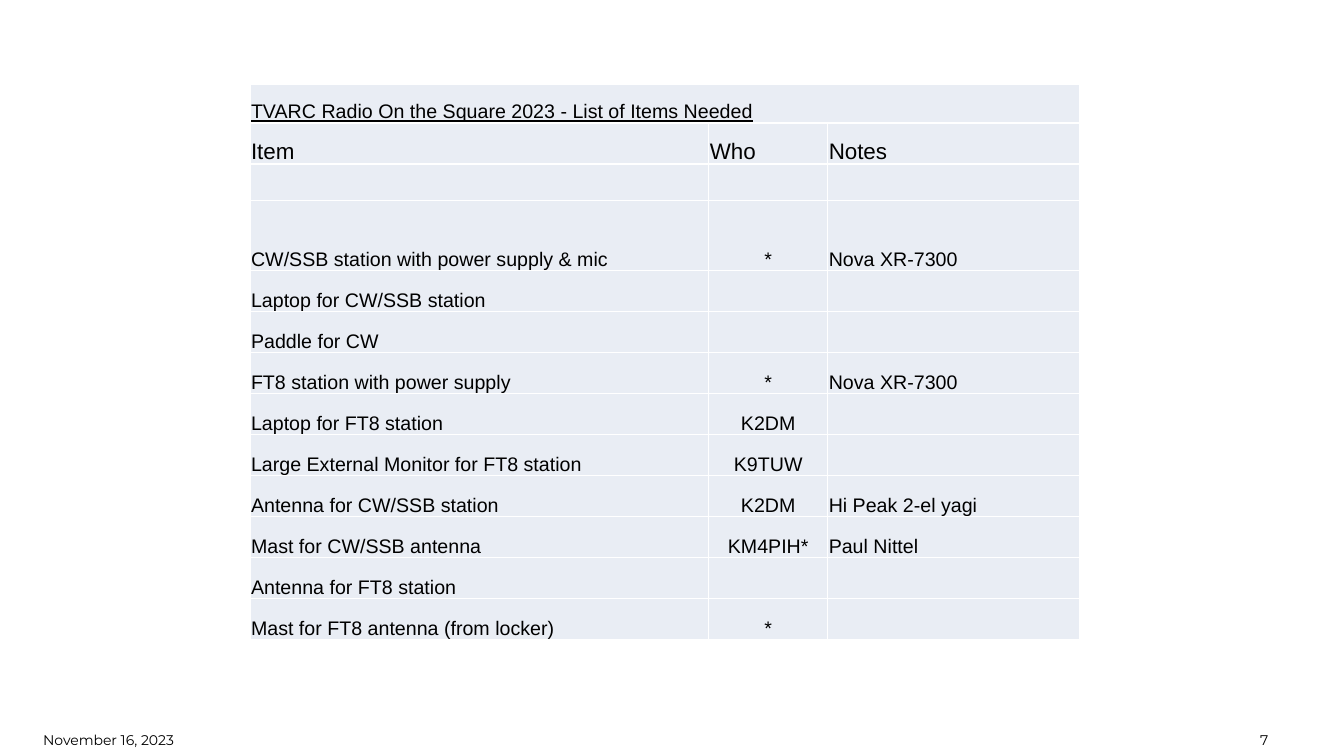
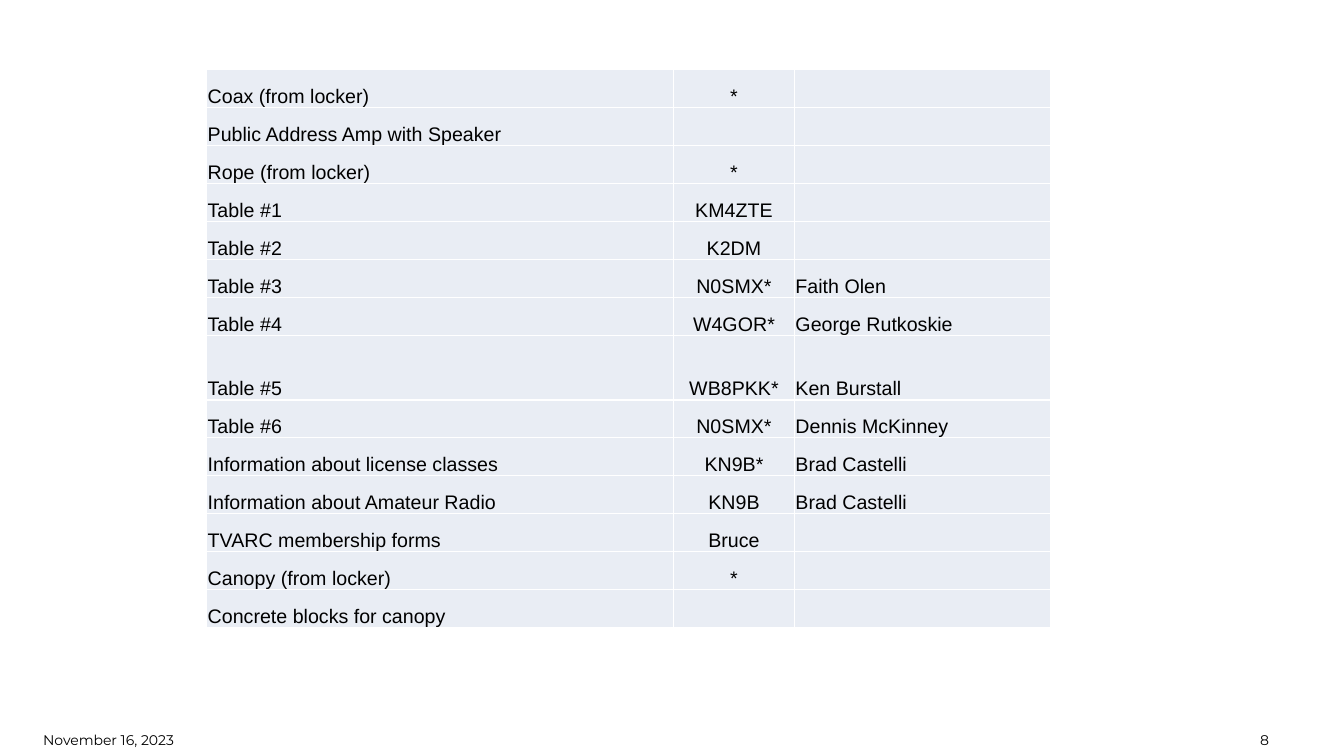
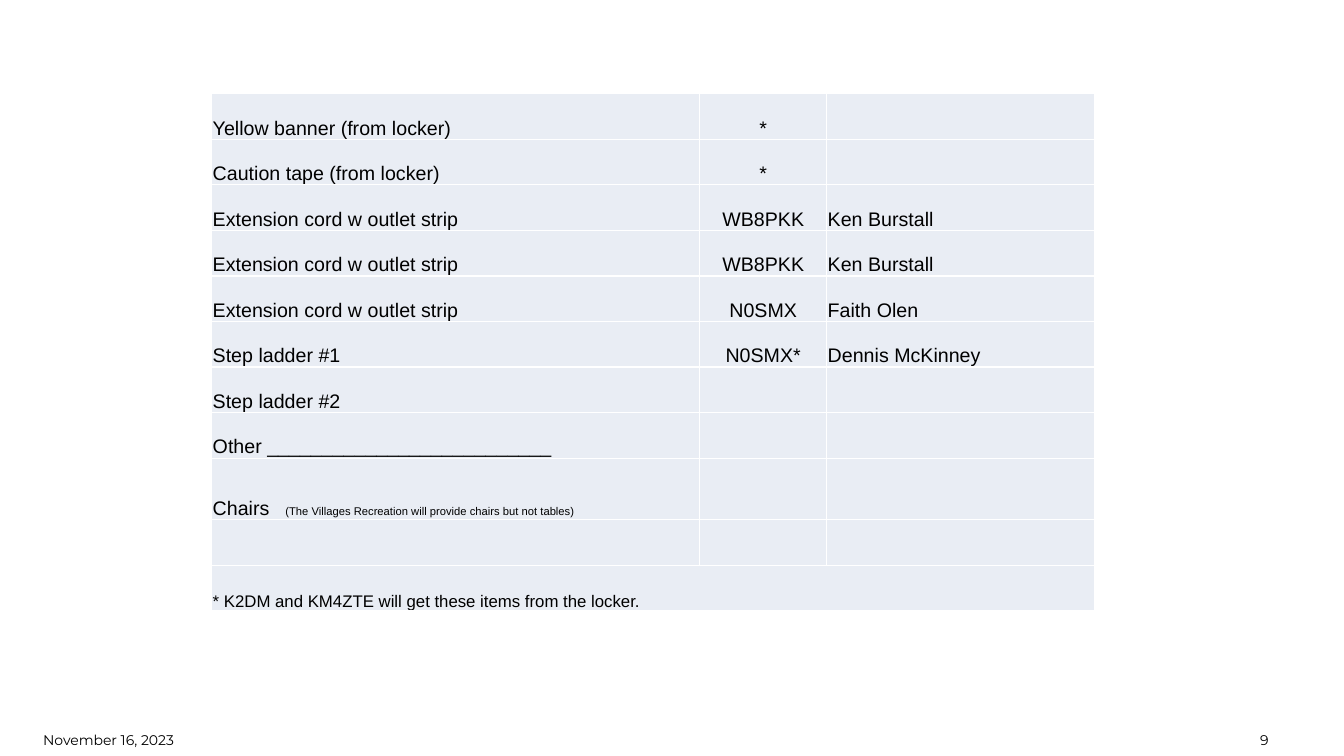
"""Builds three slides listing the items needed for a radio club event."""
import dataclasses

import lxml.etree
import pptx
import pptx.dml.color
import pptx.enum.text
import pptx.oxml.ns
import pptx.util

Inches = pptx.util.Inches
Pt = pptx.util.Pt
RGB = pptx.dml.color.RGBColor.from_string
PP_ALIGN = pptx.enum.text.PP_ALIGN
qn = pptx.oxml.ns.qn


@dataclasses.dataclass(frozen=True)
class Theme:
    ink: str = "000000"
    cell: str = "E9EDF4"
    border: str = "FFFFFF"
    table_font: str = "Arial"
    footer_font: str = "Montserrat"
    header: int = 16
    body: int = 14
    footnote: int = 12
    footer: int = 10
    remark: int = 8


theme = Theme()


def add_run(p, text, font=theme.table_font, size=theme.body, color=theme.ink, underline=None):
    r = p.add_run()
    r.text = text
    r.font.name = font
    r.font.size = Pt(size)
    r.font.color.rgb = RGB(color)
    r.font.underline = underline


def add_borders(cell):
    tcPr = cell._tc.get_or_add_tcPr()
    for side in ("lnL", "lnR", "lnT", "lnB"):
        ln = lxml.etree.SubElement(tcPr, qn(f"a:{side}"), w=str(Pt(1)))
        fill = lxml.etree.SubElement(ln, qn("a:solidFill"))
        lxml.etree.SubElement(fill, qn("a:srgbClr"), val=theme.border)


first_page = 7
date = "November 16, 2023"
tables = [
    {
        "at": (2.48, 0.84), "height": 5.51, "cols": (4.55, 1.18, 2.5),
        "special_heights": {0: 0.38, 2: 0.36, 3: 0.7},
        "sizes": {1: theme.header}, "underlined": 0, "header": 1,
        "rows": [
            ("TVARC Radio On the Square 2023 - List of Items Needed",),
            ("Item", "Who", "Notes"),
            ("", "", ""),
            ("CW/SSB station with power supply & mic", "*", "Nova XR-7300"),
            ("Laptop for CW/SSB station", "", ""),
            ("Paddle for CW", "", ""),
            ("FT8 station with power supply", "*", "Nova XR-7300"),
            ("Laptop for FT8 station", "K2DM", ""),
            ("Large External Monitor for FT8 station", "K9TUW", ""),
            ("Antenna for CW/SSB station", "K2DM", "Hi Peak 2-el yagi"),
            ("Mast for CW/SSB antenna", "KM4PIH*", "Paul Nittel"),
            ("Antenna for FT8 station", "", ""),
            ("Mast for FT8 antenna (from locker)", "*", ""),
        ],
    },
    {
        "at": (2.05, 0.69), "height": 5.54, "cols": (4.63, 1.2, 2.54),
        "special_heights": {7: 0.64},
        "rows": [
            ("Coax (from locker)", "*", ""),
            ("Public Address Amp with Speaker", "", ""),
            ("Rope (from locker)", "*", ""),
            ("Table #1", "KM4ZTE", ""),
            ("Table #2", "K2DM", ""),
            ("Table #3", "N0SMX*", "Faith Olen"),
            ("Table #4", "W4GOR*", "George Rutkoskie"),
            ("Table #5", "WB8PKK*", "Ken Burstall"),
            ("Table #6", "N0SMX*", "Dennis McKinney"),
            ("Information about license classes", "KN9B*", "Brad Castelli"),
            ("Information about Amateur Radio", "KN9B", "Brad Castelli"),
            ("TVARC membership forms", "Bruce", ""),
            ("Canopy (from locker)", "*", ""),
            ("Concrete blocks for canopy", "", ""),
        ],
    },
    {
        "at": (2.1, 0.93), "height": 5.13, "cols": (4.84, 1.26, 2.66),
        "special_heights": {8: 0.61},
        "sizes": {10: theme.footnote},
        "rows": [
            ("Yellow banner (from locker)", "*", ""),
            ("Caution tape (from locker)", "*", ""),
            ("Extension cord w outlet strip", "WB8PKK", "Ken Burstall"),
            ("Extension cord w outlet strip", "WB8PKK", "Ken Burstall"),
            ("Extension cord w outlet strip", "N0SMX", "Faith Olen"),
            ("Step ladder #1", "N0SMX*", "Dennis McKinney"),
            ("Step ladder #2", "", ""),
            ("Other " + "_" * 26, "", ""),
            ("Chairs\t(The Villages Recreation will provide chairs but not tables)", "", ""),
            ("", "", ""),
            ("* K2DM and KM4ZTE will get these items from the locker.",),
        ],
    },
]

prs = pptx.Presentation()
prs.slide_width = Inches(13.33)
prs.slide_height = Inches(7.5)

for page, spec_table in enumerate(tables, first_page):
    s = prs.slides.add_slide(prs.slide_layouts[6])

    for text, left, width in ((str(page), 12.4, 0.39), (date, 0.33, 1.67)):
        sp = s.shapes.add_textbox(Inches(left), Inches(7.21), Inches(width), Inches(0.27))
        sp.text_frame.word_wrap = False
        add_run(sp.text_frame.paragraphs[0], text, font=theme.footer_font, size=theme.footer)

    rows, cols = spec_table["rows"], spec_table["cols"]
    left, top = spec_table["at"]
    special = spec_table["special_heights"]
    row_height = (spec_table["height"] - sum(special.values())) / (len(rows) - len(special))
    table = s.shapes.add_table(
        len(rows), len(cols), Inches(left), Inches(top),
        Inches(sum(cols)), Inches(spec_table["height"]),
    ).table
    table.first_row = False
    table.horz_banding = False
    for i, width in enumerate(cols):
        table.columns[i].width = Inches(width)

    for i, row in enumerate(rows):
        table.rows[i].height = Inches(special.get(i, row_height))
        if len(row) == 1:
            table.cell(i, 0).merge(table.cell(i, len(cols) - 1))
        for j in range(len(cols)):
            cell = table.cell(i, j)
            add_borders(cell)
            cell.fill.solid()
            cell.fill.fore_color.rgb = RGB(theme.cell)
            cell.margin_left = cell.margin_right = cell.margin_top = Inches(0.01)
            cell.margin_bottom = 0
            cell.vertical_anchor = pptx.enum.text.MSO_ANCHOR.BOTTOM
            if j >= len(row) or not row[j]:
                continue
            p = cell.text_frame.paragraphs[0]
            if j == 1 and i != spec_table.get("header"):
                p.alignment = PP_ALIGN.CENTER
            text, tab, remark = row[j].partition("\t")
            if remark:
                tabs = lxml.etree.SubElement(p._p.get_or_add_pPr(), qn("a:tabLst"))
                lxml.etree.SubElement(tabs, qn("a:tab"), pos=str(Inches(0.72)), algn="l")
            add_run(
                p, text + tab, size=spec_table.get("sizes", {}).get(i, theme.body),
                underline=True if i == spec_table.get("underlined") else None,
            )
            if remark:
                add_run(p, remark, size=theme.remark)

prs.save("out.pptx")
